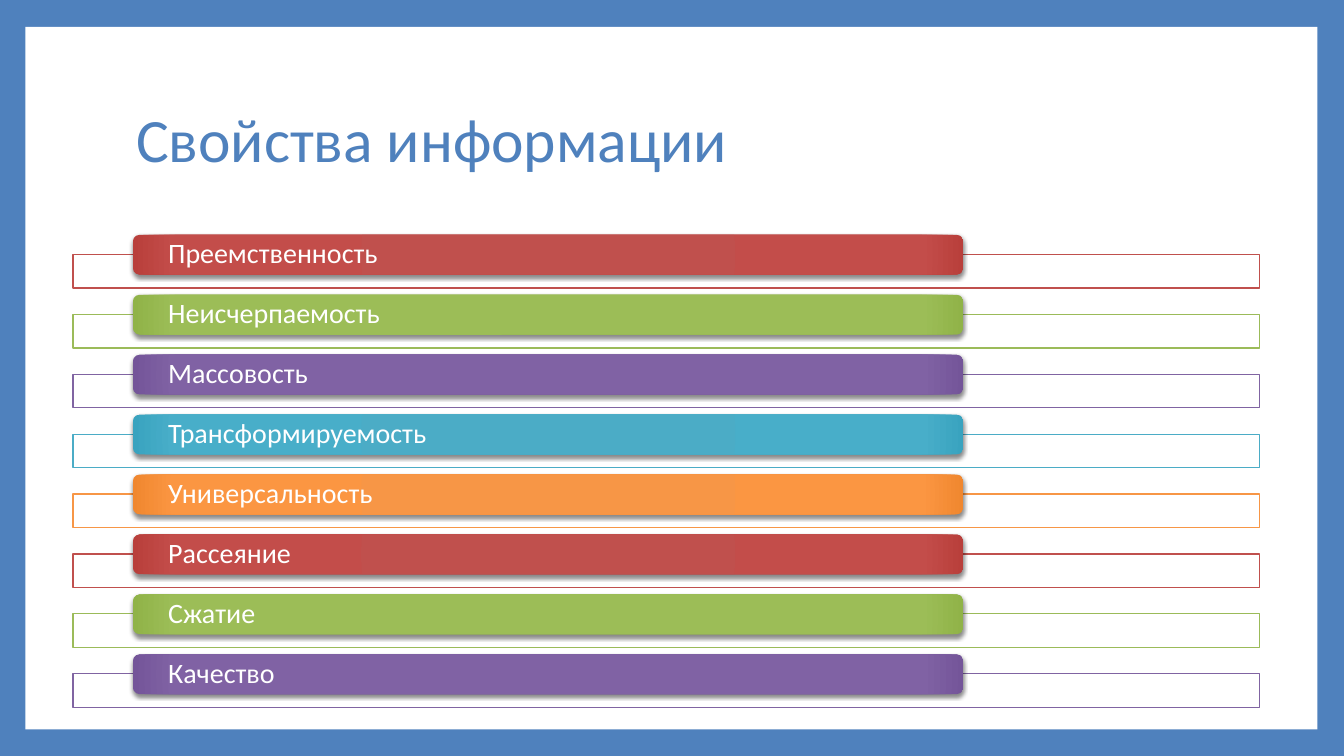
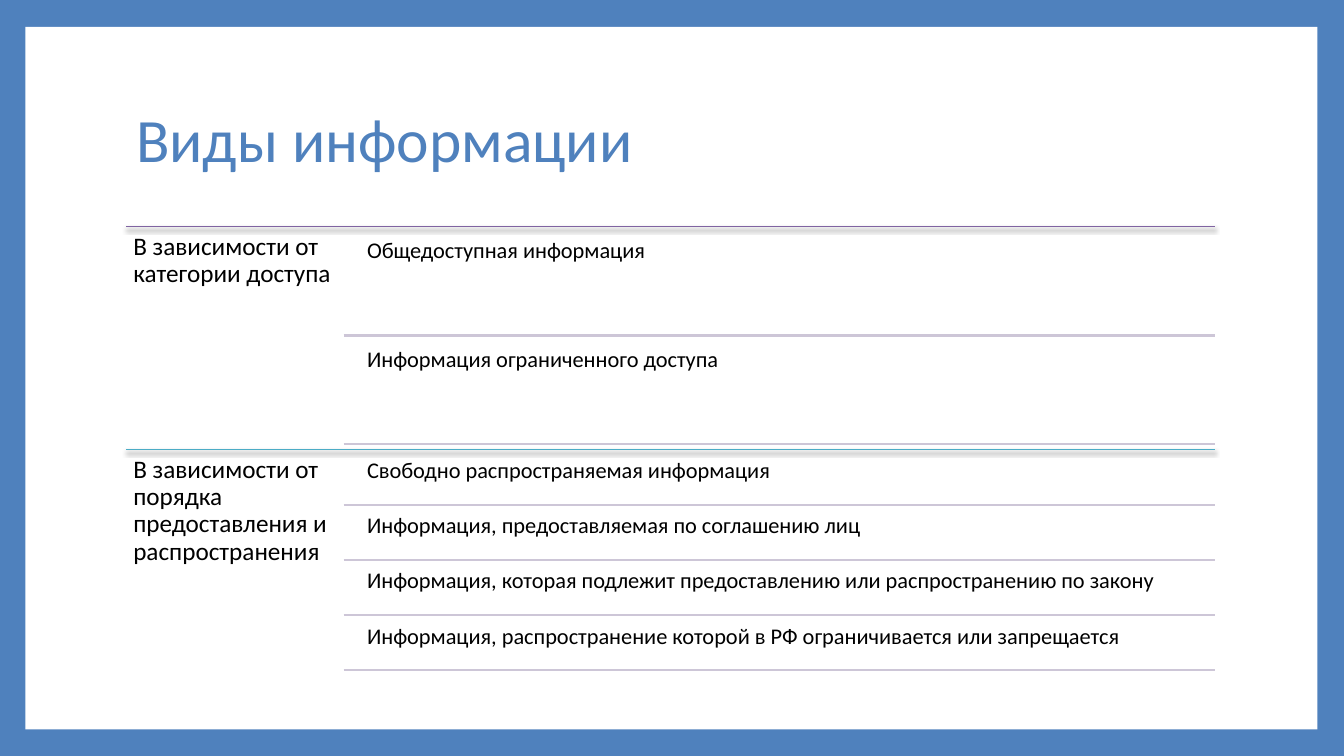
import pptx
import pptx.util
import pptx.oxml
import pptx.dml.color
import pptx.enum.shapes
import pptx.enum.text

Cm = pptx.util.Cm
Pt = pptx.util.Pt
SHAPE = pptx.enum.shapes.MSO_SHAPE
ANCHOR = pptx.enum.text.MSO_ANCHOR
NS = 'xmlns:a="http://schemas.openxmlformats.org/drawingml/2006/main"'

FONT = "Calibri"
BLUE, WHITE, BLACK, RULE = "4F81BD", "FFFFFF", "000000", "CDC6D7"
RED, GREEN, PURPLE, TEAL, ORANGE = "C0504D", "9BBB59", "8064A2", "4BACC6", "F79646"
SHADES = {
    RED: ("C34D4A", "B93F3B"),
    GREEN: ("9CBD57", "90B348"),
    PURPLE: ("8062A4", "745599"),
    TEAL: ("48AEC9", "39A3BF"),
    ORANGE: ("FB9642", "F0872F"),
}

PROPERTIES_TITLE = "Свойства информации"
PROPERTIES = [
    "Преемственность",
    "Неисчерпаемость",
    "Массовость",
    "Трансформируемость",
    "Универсальность",
    "Рассеяние",
    "Сжатие",
    "Качество",
]

KINDS_TITLE = "Виды информации"
KINDS = [
    ("В зависимости от категории доступа", PURPLE, [
        "Общедоступная информация",
        "Информация ограниченного доступа",
    ]),
    ("В зависимости от порядка предоставления и распространения", TEAL, [
        "Свободно распространяемая информация",
        "Информация, предоставляемая по соглашению лиц",
        "Информация, которая подлежит предоставлению или распространению по закону",
        "Информация, распространение которой в РФ ограничивается или запрещается",
    ]),
]


def color(value):
    return pptx.dml.color.RGBColor.from_string(value)


def box(s, kind, left, top, width, height, fill, line=None):
    sp = s.shapes.add_shape(kind, Cm(left), Cm(top), Cm(width), Cm(height))
    sp.shadow.inherit = False
    sp.fill.solid()
    sp.fill.fore_color.rgb = color(fill)
    if line:
        sp.line.color.rgb = color(line)
        sp.line.width = Pt(0.79)
    else:
        sp.line.fill.background()
    return sp


def set_effects(sp, shadow):
    spPr = sp._element.spPr
    for old in spPr.findall(pptx.oxml.ns.qn("a:effectLst")):
        spPr.remove(old)
    inner = ('<a:outerShdw blurRad="40000" dist="23000" dir="5400000" rotWithShape="0">'
             f'<a:srgbClr val="{BLACK}"><a:alpha val="45000"/></a:srgbClr></a:outerShdw>')
    spPr.append(pptx.oxml.parse_xml(
        f'<a:effectLst {NS}>{inner if shadow else ""}</a:effectLst>'))


def set_glow_fill(sp, base):
    sp.fill.gradient()
    spPr = sp._element.spPr
    old = spPr.find(pptx.oxml.ns.qn("a:gradFill"))
    stops = "".join(
        f'<a:gs pos="{pos}"><a:srgbClr val="{c}"/></a:gs>'
        for pos, c in zip((0, 90000, 100000), (base, *SHADES[base])))
    spPr.replace(old, pptx.oxml.parse_xml(
        f'<a:gradFill {NS} rotWithShape="1"><a:gsLst>{stops}</a:gsLst>'
        '<a:path path="circle"><a:fillToRect l="100000" t="100000" r="100000" b="100000"/>'
        '</a:path></a:gradFill>'))


def rule(s, left, right, y, line, width, shadow=False):
    c = s.shapes.add_connector(pptx.enum.shapes.MSO_CONNECTOR.STRAIGHT,
                               Cm(left), Cm(y), Cm(right), Cm(y))
    c.line.color.rgb = color(line)
    c.line.width = Pt(width)
    set_effects(c, shadow)


def write(sp, text, size, ink, anchor, inset_x, inset_y):
    tf = sp.text_frame
    tf.text = text
    tf.word_wrap = True
    tf.vertical_anchor = anchor
    tf.margin_left = tf.margin_right = Cm(inset_x)
    tf.margin_top = tf.margin_bottom = Cm(inset_y)
    p = tf.paragraphs[0]
    p.alignment = pptx.enum.text.PP_ALIGN.LEFT
    p.line_spacing = 0.9
    f = p.runs[0].font
    f.name, f.size, f.color.rgb = FONT, Pt(size), color(ink)


def label(s, text, left, top, width, height, size):
    sp = s.shapes.add_textbox(Cm(left), Cm(top), Cm(width), Cm(height))
    write(sp, text, size, BLACK, ANCHOR.TOP, 0.18, 0.18)


def set_up_master(prs, layout):
    master = prs.slide_master
    master.background.fill.solid()
    master.background.fill.fore_color.rgb = color(BLUE)
    title = layout.placeholders[0]
    title.left, title.top, title.width, title.height = map(Cm, (3.18, 1.7, 27.43, 3.76))


def add_slide(prs, layout, title):
    s = prs.slides.add_slide(layout)
    write(s.shapes.title, title, 44, BLUE, ANCHOR.MIDDLE, 0.25, 0.13)
    return s


def add_master_panel(prs, s):
    panel = box(s, SHAPE.RECTANGLE, 0.64, 0.68, 32.56, 17.7, WHITE)
    prs.slide_master.shapes._spTree.insert(2, panel._element)


def draw_properties(s):
    top, pitch = 5.92, 1.51
    accents = list(SHADES)
    for i, name in enumerate(PROPERTIES):
        y = top + i * pitch
        accent = accents[i % len(accents)]
        box(s, SHAPE.RECTANGLE, 1.84, y + 0.49, 29.9, 0.85, WHITE, accent)
        pill = box(s, SHAPE.ROUNDED_RECTANGLE, 3.35, y, 20.93, 1, accent)
        set_glow_fill(pill, accent)
        set_effects(pill, True)
        write(pill, name, 20, WHITE, ANCHOR.MIDDLE, 0.84, 0)


def draw_kinds(s):
    left, right, top, height = 3.18, 30.61, 5.71, 5.62
    gap_ratio = 0.05
    for i, (basis, accent, kinds) in enumerate(KINDS):
        y = top + i * height
        rule(s, left, right, y, accent, 0.79, shadow=True)
        label(s, basis, left, y, 5.49, height, 18)
        n = len(kinds)
        row = height / (n + (n + 1) * gap_ratio)
        for kind in kinds:
            y += row * gap_ratio
            label(s, kind, 9.07, y, 21.54, row, 16)
            y += row
            rule(s, 8.66, right, y, RULE, 1.5)


def main():
    prs = pptx.Presentation()
    prs.slide_width, prs.slide_height = Cm(33.87), Cm(19.05)
    layout = prs.slide_layouts.get_by_name("Title Only")
    set_up_master(prs, layout)
    s = add_slide(prs, layout, PROPERTIES_TITLE)
    add_master_panel(prs, s)
    draw_properties(s)
    draw_kinds(add_slide(prs, layout, KINDS_TITLE))
    prs.save("out.pptx")


if __name__ == "__main__":
    main()
